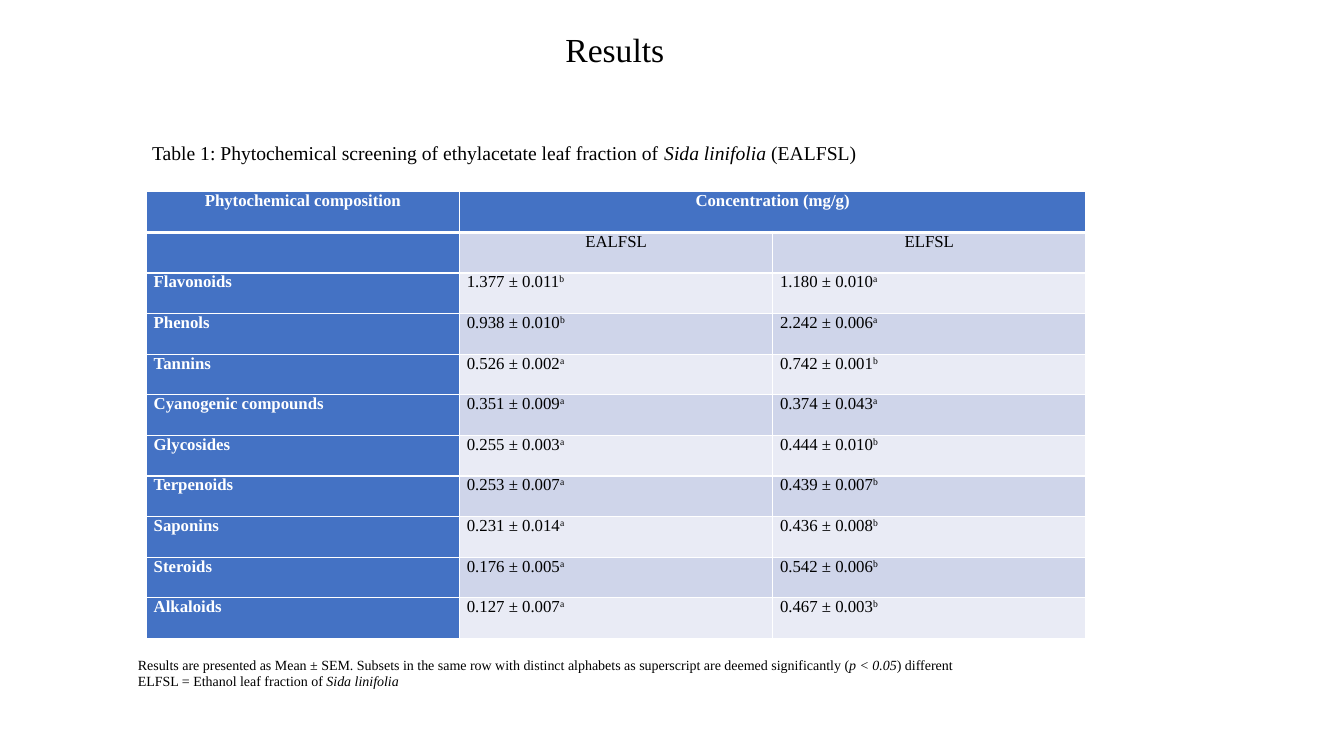
from pptx import Presentation
from pptx.dml.color import RGBColor
from pptx.enum.text import PP_ALIGN
from pptx.oxml import parse_xml
from pptx.oxml.ns import nsdecls
from pptx.util import Pt

BLUE, BAND_DARK, BAND_LIGHT = "4472C4", "CFD5EA", "E9EBF5"
BLACK, WHITE = "000000", "FFFFFF"
ROW_HEIGHT, COLUMN_WIDTH = 29, 223.7

# Compound, then mean ± SEM and significance letter for EALFSL and ELFSL
RESULTS = [
    ("Flavonoids", "1.377 ± 0.011", "b", "1.180 ± 0.010", "a"),
    ("Phenols", "0.938 ± 0.010", "b", "2.242 ± 0.006", "a"),
    ("Tannins", "0.526 ± 0.002", "a", "0.742 ± 0.001", "b"),
    ("Cyanogenic compounds", "0.351 ± 0.009", "a", "0.374 ± 0.043", "a"),
    ("Glycosides", "0.255 ± 0.003", "a", "0.444 ± 0.010", "b"),
    ("Terpenoids", "0.253 ± 0.007", "a", "0.439 ± 0.007", "b"),
    ("Saponins", "0.231 ± 0.014", "a", "0.436 ± 0.008", "b"),
    ("Steroids", "0.176 ± 0.005", "a", "0.542 ± 0.006", "b"),
    ("Alkaloids", "0.127 ± 0.007", "a", "0.467 ± 0.003", "b"),
]


def color(value):
    return RGBColor.from_string(value)


class ResultsPage:
    font_name = "Times New Roman"

    def __init__(self, deck):
        self.page = deck.slides.add_slide(deck.slide_layouts[6])

    def fill_para(self, para, spans, size, ink=BLACK, bold=False, align=PP_ALIGN.LEFT):
        """Fill a paragraph from (text, style) pairs; style is "", "italic" or "super"."""
        para.alignment = align
        for text, style in spans:
            span = para.add_run()
            span.text = text
            span.font.name = self.font_name
            span.font.size = Pt(size)
            span.font.bold = bold
            span.font.italic = style == "italic"
            span.font.color.rgb = color(ink)
            if style == "super":
                span._r.get_or_add_rPr().set("baseline", "30000")

    def text(self, left, top, width, height, lines, size, align=PP_ALIGN.LEFT):
        box = self.page.shapes.add_textbox(Pt(left), Pt(top), Pt(width), Pt(height))
        frame = box.text_frame
        frame.word_wrap = True
        for index, spans in enumerate(lines):
            para = frame.add_paragraph() if index else frame.paragraphs[0]
            self.fill_para(para, spans, size, align=align)
        return frame

    def table(self, left, top, rows, columns):
        frame = self.page.shapes.add_table(
            rows, columns, Pt(left), Pt(top),
            Pt(columns * COLUMN_WIDTH), Pt(rows * ROW_HEIGHT))
        table = frame.table
        table.horz_banding = False
        for column in table.columns:
            column.width = Pt(COLUMN_WIDTH)
        for row in table.rows:
            row.height = Pt(ROW_HEIGHT)
        return table

    def cell(self, cell, spans, fill, centered=False, bottom=1, top=1):
        """Style one cell; blue cells carry bold white text."""
        cell.margin_left = cell.margin_right = Pt(5.2)
        cell.margin_top = cell.margin_bottom = 0
        cell.fill.solid()
        cell.fill.fore_color.rgb = color(fill)
        heading = fill == BLUE
        para = cell.text_frame.paragraphs[0]
        para.font.size = Pt(12)
        self.fill_para(para, spans, 12, WHITE if heading else BLACK, heading,
                       PP_ALIGN.CENTER if centered else PP_ALIGN.LEFT)
        sides = {"lnL": 1, "lnR": 1, "lnT": top, "lnB": bottom}
        for position, (side, width) in enumerate(sides.items()):
            line = parse_xml(
                f'<a:{side} {nsdecls("a")} w="{Pt(width)}"><a:solidFill>'
                f'<a:srgbClr val="{WHITE}"/></a:solidFill></a:{side}>')
            cell._tc.get_or_add_tcPr().insert(position, line)


def main():
    deck = Presentation()
    deck.slide_width, deck.slide_height = Pt(960), Pt(540)
    results = ResultsPage(deck)

    title = results.text(79.2, 23, 720, 32.4, [[("Results", "")]], 24, PP_ALIGN.CENTER)
    title.paragraphs[0].line_spacing = 0.8
    title.paragraphs[0].space_before = Pt(10)

    rows = [
        [[("Phytochemical composition", "")], [("Concentration (mg/g)", "")], []],
        [[], [("EALFSL", "")], [("ELFSL", "")]],
    ]
    for compound, ealfsl, ealfsl_letter, elfsl, elfsl_letter in RESULTS:
        rows.append([[(compound, "")],
                     [(ealfsl, ""), (ealfsl_letter, "super")],
                     [(elfsl, ""), (elfsl_letter, "super")]])

    table = results.table(104.6, 137, len(rows), 3)
    table.cell(0, 1).merge(table.cell(0, 2))
    for r, row in enumerate(rows):
        band = BAND_DARK if r % 2 else BAND_LIGHT
        for c, spans in enumerate(row):
            fill = BLUE if r == 0 or c == 0 else band
            results.cell(table.cell(r, c), spans, fill, centered=r < 2,
                         bottom=3 if r == 0 else 1, top=3 if r == 1 else 1)

    caption = results.text(101.5, 95.8, 638, 38.9, [[
        ("Table 1: Phytochemical screening of ethylacetate leaf fraction of ", ""),
        ("Sida linifolia ", "italic"),
        ("(EALFSL)", ""),
    ]], 14)
    caption.margin_top = Pt(4.6)

    results.text(91.4, 465.1, 658.8, 31.7, [
        [("Results are presented as Mean ± SEM. Subsets in the same row with distinct "
          "alphabets as superscript are deemed significantly (", ""),
         ("p < 0.05", "italic"), (") different", "")],
        [("ELFSL = Ethanol leaf fraction of ", ""), ("Sida linifolia", "italic")],
    ], 10)

    deck.save("out.pptx")


if __name__ == "__main__":
    main()
